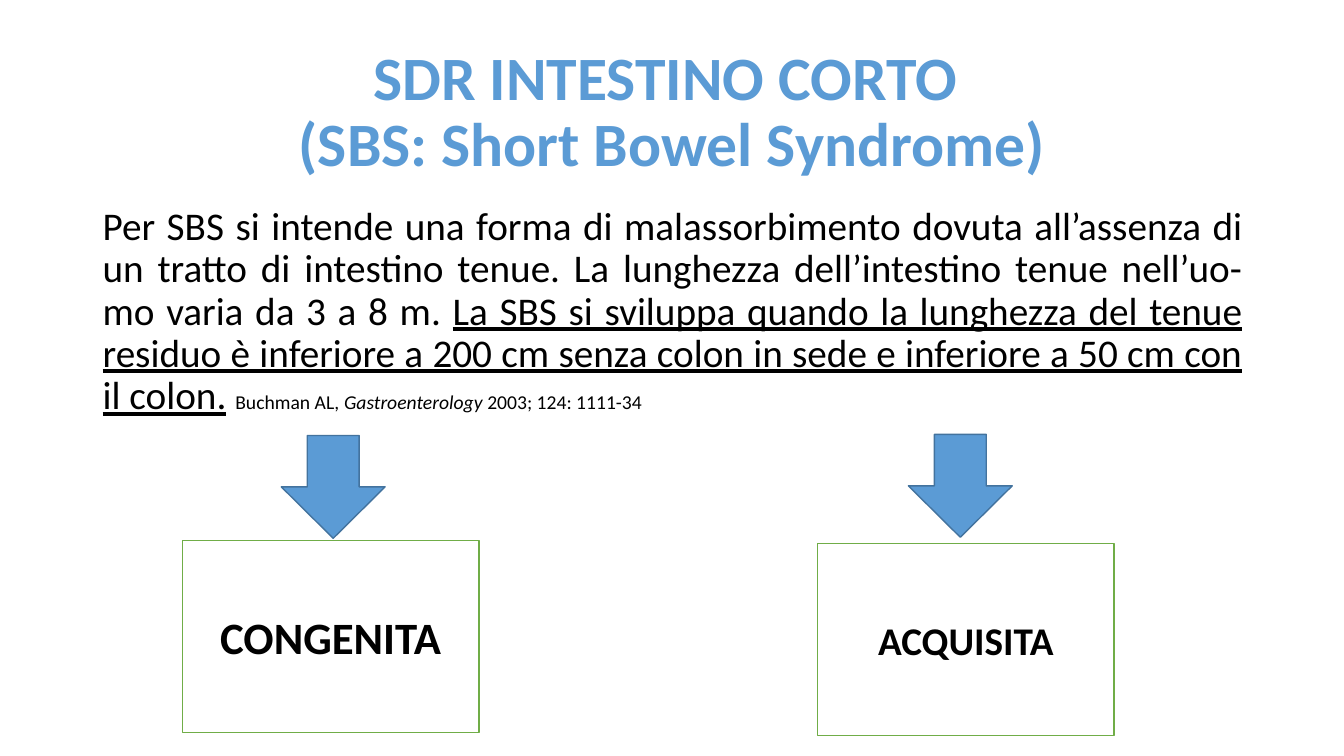
from pptx import Presentation
from pptx.dml.color import RGBColor as RGB
from pptx.enum.shapes import MSO_SHAPE as Shape
from pptx.enum.text import MSO_ANCHOR as Anchor, PP_ALIGN as Align
from pptx.util import Inches, Pt

HUES = {"blue": "5B9BD5", "edge": "43739E", "green": "70AD47",
        "white": "FFFFFF", "black": "000000"}

deck = Presentation()
deck.slide_width, deck.slide_height = Inches(13.33), Inches(7.5)
slide = deck.slides.add_slide(deck.slide_layouts[6])


def add_run(para, text, size, hue="black", bold=False, line=False, slant=False):
    run = para.add_run()
    run.text = text
    font = run.font
    font.name, font.size = "Calibri", Pt(size)
    font.bold, font.underline, font.italic = bold, line, slant
    font.color.rgb = RGB.from_string(HUES[hue])


def add_form(kind, left, top, width, height, fill, edge):
    form = slide.shapes.add_shape(
        kind, Inches(left), Inches(top), Inches(width), Inches(height))
    form.shadow.inherit = False
    form.fill.solid()
    form.fill.fore_color.rgb = RGB.from_string(HUES[fill])
    form.line.color.rgb = RGB.from_string(HUES[edge])
    form.line.width = Pt(1)
    return form


# Title
title = slide.shapes.add_textbox(
    Inches(0.92), Inches(0.4), Inches(11.5), Inches(1.45)).text_frame
title.word_wrap = True
title.vertical_anchor = Anchor.MIDDLE
para = title.paragraphs[0]
para.alignment, para.line_spacing = Align.CENTER, 0.9
add_run(para, "SDR INTESTINO CORTO ", 44, "blue", bold=True)
para.add_line_break()
add_run(para, "(SBS: Short Bowel Syndrome)", 44, "blue", bold=True)

# Definition and its reference
body = slide.shapes.add_textbox(
    Inches(0.92), Inches(2), Inches(11.5), Inches(4.76)).text_frame
body.word_wrap = True
para = body.paragraphs[0]
para.alignment, para.line_spacing = Align.JUSTIFY, 0.9
para.space_before = Pt(10)
add_run(para, "Per SBS si intende una forma di malassorbimento dovuta "
        "all’assenza di un tratto di intestino tenue. La lunghezza "
        "dell’intestino tenue nell’uo- mo varia da 3 a 8 m. ", 28)
add_run(para, "La SBS si sviluppa quando la lunghezza del tenue residuo è "
        "inferiore a 200 cm senza colon in sede e inferiore a 50 cm con "
        "il colon.", 28, line=True)
add_run(para, " ", 28, bold=True)
add_run(para, "Buchman AL, ", 14)
add_run(para, "Gastroenterology ", 14, slant=True)
add_run(para, "2003; 124: 1111-34", 14)

# Two forms of the syndrome
for word, size, left, top in [("CONGENITA", 32, 1.81, 5.36),
                              ("ACQUISITA", 28, 8.11, 5.39)]:
    box = add_form(Shape.RECTANGLE, left, top, 2.94, 1.91, "white", "green")
    box.text_frame.vertical_anchor = Anchor.MIDDLE
    para = box.text_frame.paragraphs[0]
    para.alignment = Align.CENTER
    add_run(para, word, size, bold=True)

# Arrows down to the boxes
for left, top in [(2.79, 4.32), (9.01, 4.31)]:
    add_form(Shape.DOWN_ARROW, left, top, 1.03, 1.02, "blue", "edge")

deck.save("out.pptx")
